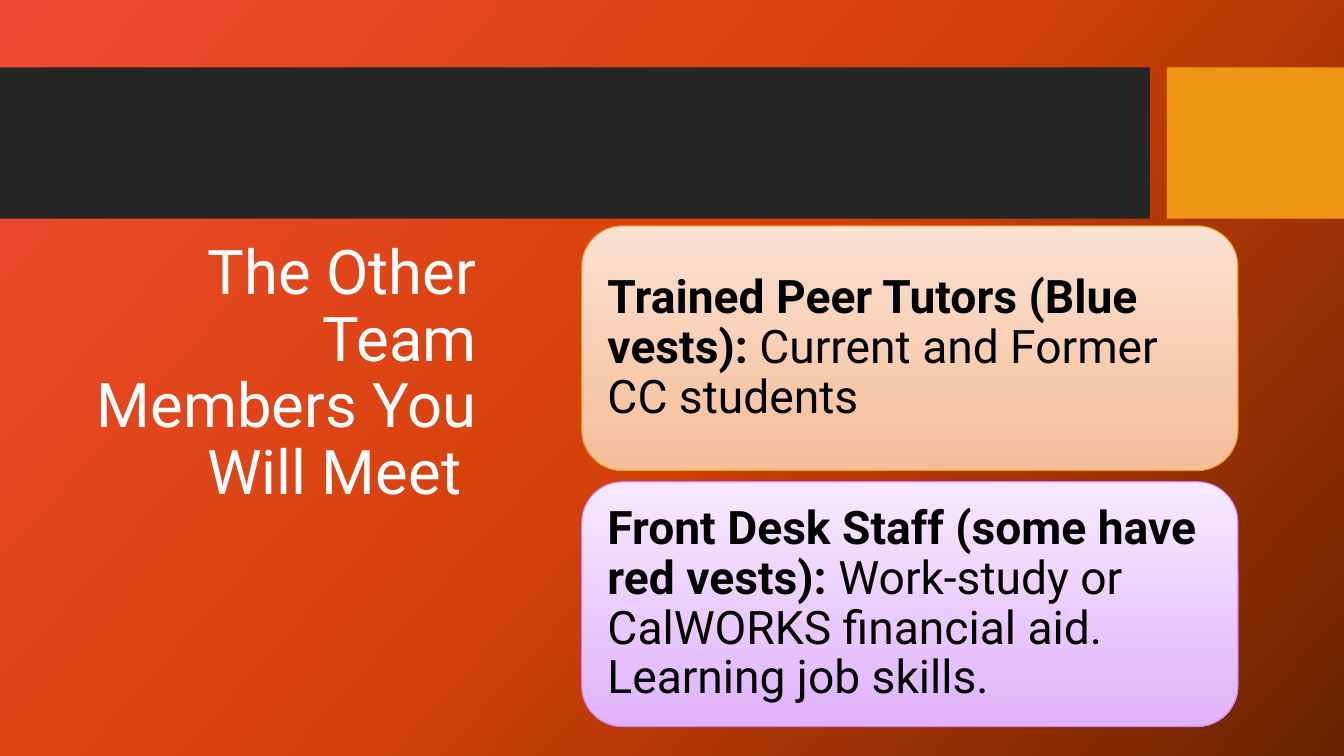
from copy import deepcopy
from pptx import Presentation, util as u
from pptx.dml.color import RGBColor
from pptx.enum import shapes, text

HUES = {
    "dark": "262626", "gold": "F09415", "white": "FFFFFF", "black": "000000",
    "red": "F14B31", "rust": "D54209", "brown": "6A2300",
    "peach": "FAE1D1", "tan": "F5BD98",
    "pale": "F6E9FE", "lilac": "E0B2FB", "plum": "D17DF9",
}
TITLE = "The Other Team Members You Will Meet "
CARDS = [
    ("Trained Peer Tutors (Blue vests):", " Current and Former CC students",
     ("peach", "tan"), "gold"),
    ("Front Desk Staff (some have red vests):",
     " Work-study or CalWORKS financial aid. Learning job skills.",
     ("pale", "lilac"), "plum"),
]
BARS = [(0, 28.98, "dark"), (29.41, 4.46, "gold")]
LEFT, TOP, WIDE, HIGH, STEP, PAD = 14.66, 5.69, 16.54, 6.17, 6.45, 0.3


def hue(name):
    return RGBColor.from_string(HUES[name])


def put(item, **looks):
    for key, value in looks.items():
        setattr(item, key, value)


def blend(fill, names, angle):
    fill.gradient()
    fill.gradient_angle = angle
    first = fill.gradient_stops[0]._gs
    for _ in names[2:]:
        first.addnext(deepcopy(first))
    for i, (stop, name) in enumerate(zip(fill.gradient_stops, names)):
        stop.position = i / (len(names) - 1)
        stop.color.rgb = hue(name)


def block(kind, *box):
    shape = slide.shapes.add_shape(kind, *map(u.Cm, box))
    shape.shadow.inherit = False
    return shape


def write(frame, runs, size, color, align, pad):
    put(frame, word_wrap=True, auto_size=text.MSO_AUTO_SIZE.NONE,
        vertical_anchor=text.MSO_ANCHOR.MIDDLE)
    for side in ("left", "top", "right", "bottom"):
        if pad:
            setattr(frame, "margin_" + side, u.Cm(pad))
    para = frame.paragraphs[0]
    put(para, alignment=align, line_spacing=0.9)
    for words, bold in runs:
        run = para.add_run()
        run.text = words
        put(run.font, name="Roboto", size=u.Pt(size), bold=bold)
        run.font.color.rgb = hue(color)


deck = Presentation()
put(deck, slide_width=u.Cm(33.87), slide_height=u.Cm(19.05))
slide = deck.slides.add_slide(deck.slide_layouts[5])
blend(slide.background.fill, ("red", "rust", "brown"), 318)

for left, width, color in BARS:
    bar = block(shapes.MSO_SHAPE.RECTANGLE, left, 1.7, width, 3.81)
    bar.fill.solid()
    bar.fill.fore_color.rgb = hue(color)
    bar.line.fill.background()

title = slide.shapes.title
put(title, left=u.Cm(1.88), top=u.Cm(5.74), width=u.Cm(10.39), height=u.Cm(7.39))
write(title.text_frame, [(TITLE, False)], 44, "white", text.PP_ALIGN.RIGHT, None)

for i, (head, body, fills, edge) in enumerate(CARDS):
    top = TOP + i * STEP
    card = block(shapes.MSO_SHAPE.ROUNDED_RECTANGLE, LEFT, top, WIDE, HIGH)
    blend(card.fill, fills, 270)
    card.line.color.rgb = hue(edge)
    card.line.width = u.Pt(0.75)
    box = slide.shapes.add_textbox(*map(u.Cm, (
        LEFT + PAD, top + PAD, WIDE - 2 * PAD, HIGH - 2 * PAD)))
    write(box.text_frame, [(head, True), (body, False)], 33, "black",
          text.PP_ALIGN.LEFT, 0.35)

deck.save("out.pptx")
